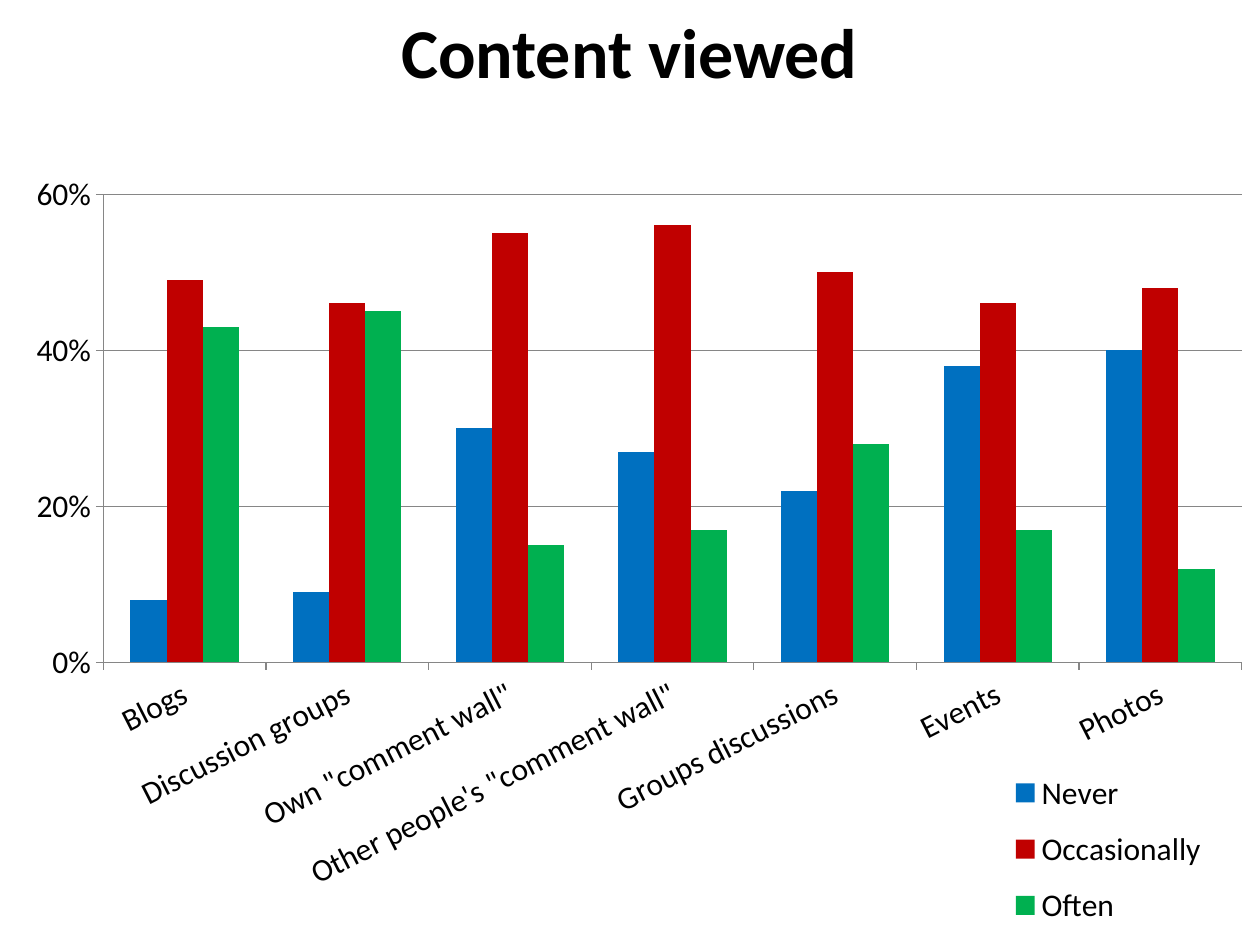
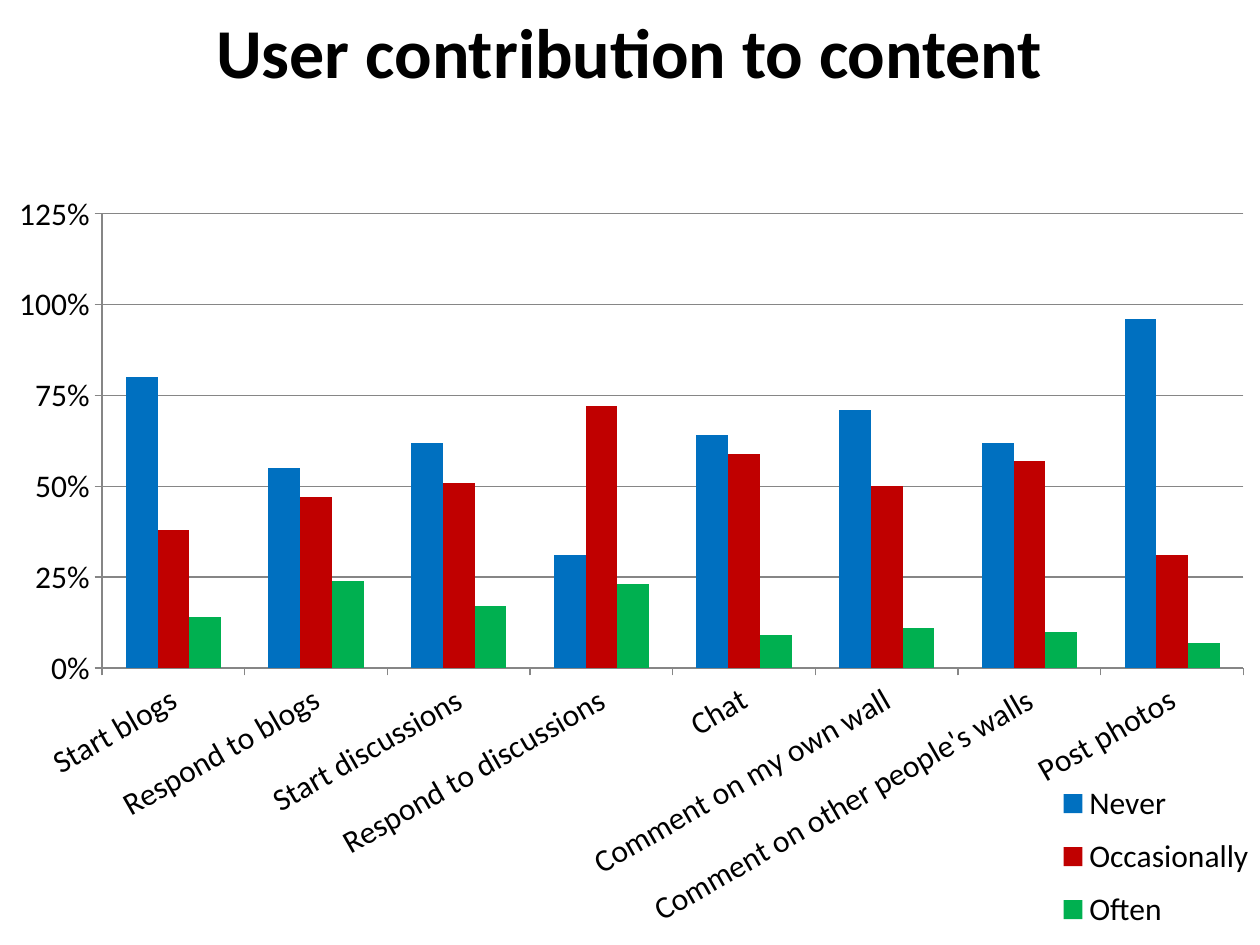
import pptx
import pptx.chart.data
import pptx.dml.color
import pptx.enum.chart
import pptx.enum.text
import pptx.oxml
import pptx.oxml.ns
import pptx.util

Inches = pptx.util.Inches
Pt = pptx.util.Pt
RGBColor = pptx.dml.color.RGBColor
qn = pptx.oxml.ns.qn

FONT = "Calibri"
BLACK = RGBColor(0x00, 0x00, 0x00)
AXIS_GRAY = RGBColor(0x86, 0x86, 0x86)
ANSWER_COLORS = {
    "Never": RGBColor(0x00, 0x70, 0xC0),
    "Occasionally": RGBColor(0xC0, 0x00, 0x00),
    "Often": RGBColor(0x00, 0xB0, 0x50),
}

# "frame" is in inches; "plot" and "legend" are x, y, w, h as shares of the frame.
SURVEYS = [
    {
        "title": "Content viewed",
        "frame": (0.14, 1.37, 9.72, 6.13),
        "plot": (0.07, 0.028, 0.93, 0.606),
        "legend": (0.801, 0.755, 0.18, 0.242),
        "maximum": 0.6, "step": 0.2, "label_angle": -27,
        "categories": ["Blogs", "Discussion groups", 'Own "comment wall"',
                       'Other people\'s "comment wall"', "Groups discussions",
                       "Events", "Photos"],
        "values": [(0.08, 0.09, 0.3, 0.27, 0.22, 0.38, 0.4),
                   (0.49, 0.46, 0.55, 0.56, 0.5, 0.46, 0.48),
                   (0.43, 0.45, 0.15, 0.17, 0.28, 0.17, 0.12)],
    },
    {
        "title": "User contribution to content",
        "frame": (0, 1.38, 10, 6.11),
        "plot": (0.081, 0.052, 0.906, 0.59),
        "legend": (0.836, 0.774, 0.163, 0.226),
        "maximum": 1.25, "step": 0.25, "label_angle": -30,
        "categories": ["Start blogs", "Respond to blogs", "Start discussions",
                       "Respond to discussions", "Chat", "Comment on my own wall",
                       "Comment on other people's walls", "Post photos"],
        "values": [(0.8, 0.55, 0.62, 0.31, 0.64, 0.71, 0.62, 0.96),
                   (0.38, 0.47, 0.51, 0.72, 0.59, 0.5, 0.57, 0.31),
                   (0.14, 0.24, 0.17, 0.23, 0.09, 0.11, 0.1, 0.07)],
    },
]


def manual_layout(box, inner=False):
    """Return a c:layout element that fixes a chart part at box (x, y, w, h)."""
    settings = [("layoutTarget", "inner")] if inner else []
    settings += [("xMode", "edge"), ("yMode", "edge")]
    settings += zip("xywh", box)
    tags = "".join(f'<c:{name} val="{value}"/>' for name, value in settings)
    return pptx.oxml.parse_xml(
        f'<c:layout {pptx.oxml.ns.nsdecls("c")}>'
        f"<c:manualLayout>{tags}</c:manualLayout></c:layout>")


presentation = pptx.Presentation()
presentation.slide_width = Inches(10)
presentation.slide_height = Inches(7.5)

for survey in SURVEYS:
    slide = presentation.slides.add_slide(presentation.slide_layouts[6])

    chart_data = pptx.chart.data.CategoryChartData(number_format="0%")
    chart_data.categories = survey["categories"]
    for answer, values in zip(ANSWER_COLORS, survey["values"]):
        chart_data.add_series(answer, values)
    chart = slide.shapes.add_chart(
        pptx.enum.chart.XL_CHART_TYPE.COLUMN_CLUSTERED,
        *map(Inches, survey["frame"]), chart_data).chart
    chart.has_title = False
    chart.font.name = FONT
    chart.font.size = Pt(18)
    chart.font.color.rgb = BLACK

    plot = chart.plots[0]
    plot.gap_width = 150
    plot.overlap = 0
    plot.vary_by_categories = False
    for series, color in zip(plot.series, ANSWER_COLORS.values()):
        series.format.fill.solid()
        series.format.fill.fore_color.rgb = color

    value_axis = chart.value_axis
    value_axis.minimum_scale = 0
    value_axis.maximum_scale = survey["maximum"]
    value_axis.major_unit = survey["step"]
    value_axis.has_major_gridlines = True
    value_axis.tick_labels.number_format = "0%"
    value_axis.tick_labels.number_format_is_linked = False
    category_axis = chart.category_axis
    for axis in (value_axis, category_axis):
        axis.major_tick_mark = pptx.enum.chart.XL_TICK_MARK.OUTSIDE
        axis.tick_labels.font.size = Pt(18)
    for line in (value_axis.format.line, category_axis.format.line,
                 value_axis.major_gridlines.format.line):
        line.color.rgb = AXIS_GRAY
        line.width = Pt(0.75)
    label_body = category_axis._element.find(qn("c:txPr")).find(qn("a:bodyPr"))
    label_body.set("rot", str(survey["label_angle"] * 60000))
    label_body.set("vert", "horz")

    chart.has_legend = True
    legend = chart.legend
    legend.position = pptx.enum.chart.XL_LEGEND_POSITION.RIGHT
    legend.include_in_layout = False
    legend.font.size = Pt(18)

    plot_area = chart._chartSpace.chart.plotArea
    for part in (plot_area, legend._element):
        for layout in part.findall(qn("c:layout")):
            part.remove(layout)
    plot_area.insert(0, manual_layout(survey["plot"], inner=True))
    legend._element.find(qn("c:legendPos")).addnext(manual_layout(survey["legend"]))

    title_box = slide.shapes.add_textbox(
        Inches(1.06), Inches(0.02), Inches(7.87), Inches(0.77))
    title_frame = title_box.text_frame
    title_frame.word_wrap = True
    title_frame.auto_size = pptx.enum.text.MSO_AUTO_SIZE.SHAPE_TO_FIT_TEXT
    paragraph = title_frame.paragraphs[0]
    paragraph.text = survey["title"]
    paragraph.alignment = pptx.enum.text.PP_ALIGN.CENTER
    paragraph.font.name = FONT
    paragraph.font.size = Pt(40)
    paragraph.font.bold = True
    paragraph.font.color.rgb = BLACK

presentation.save("out.pptx")
